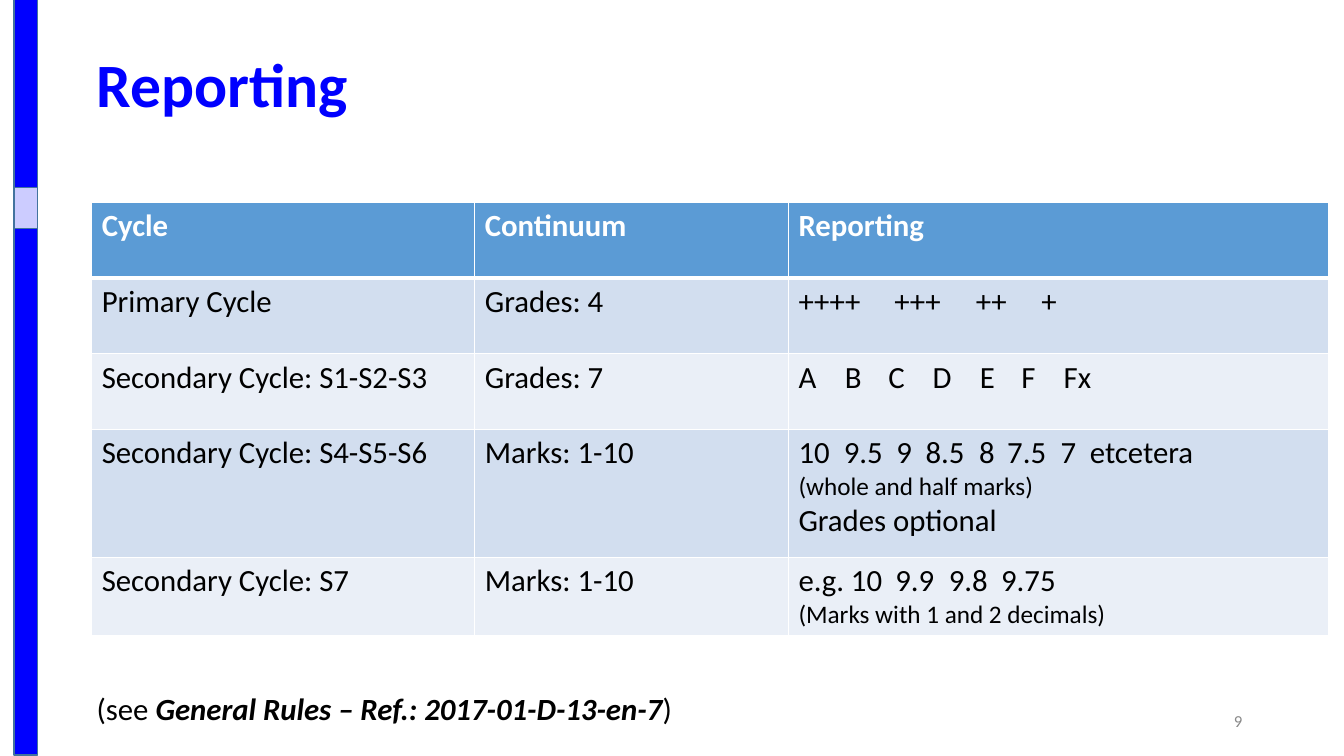
"""Build the Reporting slide with its table of cycles, continuums and report formats."""
from lxml.etree import SubElement
from pptx import Presentation
from pptx.dml.color import RGBColor
from pptx.enum.shapes import MSO_SHAPE
from pptx.enum.text import MSO_ANCHOR, PP_ALIGN
from pptx.oxml.ns import qn
from pptx.util import Inches, Pt

COLORS = {"blue": "0000FF", "lilac": "CCCCFF", "edge": "43739E", "header": "5B9BD5",
          "band": "D2DEEF", "light": "EAEFF7", "white": "FFFFFF", "black": "000000",
          "grey": "898989"}

BARS = [((0.14, -0.01, 0.23, 7.5), "blue"), ((0.14, 1.86, 0.23, 0.41), "lilac")]

BODY = {"size": 22, "color": "black"}
SMALL = {"size": 18, "color": "black"}
HEAD = {"size": 22, "color": "white", "bold": True}

TEXTS = [
    {"box": (0.77, 0.27, 12.57, 1.2), "anchor": MSO_ANCHOR.MIDDLE, "indent": 0.09,
     "para": {"line_spacing": 0.9},
     "runs": [("Reporting", {"size": 44, "color": "blue", "bold": True})]},
    {"box": (0.77, 6.79, 6.06, 0.47), "anchor": MSO_ANCHOR.TOP, "indent": 0.09,
     "para": {"space_before": Pt(6)},
     "runs": [("(see ", BODY),
              ("General Rules – Ref.: 2017-01-D-13-en-7", {**BODY, "bold": True, "italic": True}),
              (")", BODY)]},
    {"box": (9.42, 6.95, 3, 0.4), "anchor": MSO_ANCHOR.MIDDLE, "indent": 0,
     "para": {"alignment": PP_ALIGN.RIGHT},
     "runs": [("9", {"size": 12, "color": "grey"})]},
]

TABLE_BOX = (0.91, 2.01, 12.27, 4.28)
COLS = [3.8, 3.11, 5.36]
ROWS = [0.75, 0.75, 0.75, 1.27, 0.77]
CELLS = [
    ["Cycle", "Continuum", "Reporting"],
    ["Primary Cycle", "Grades: 4", "++++\t+++\t++\t+"],
    ["Secondary Cycle: S1-S2-S3", "Grades: 7", "A\tB\tC\tD\tE\tF\tFx"],
    ["Secondary Cycle: S4-S5-S6", "Marks: 1-10",
     "10\t9.5\t9\t8.5\t8\t7.5\t7\tetcetera\n(whole and half marks)\nGrades optional"],
    ["Secondary Cycle: S7", "Marks: 1-10",
     "e.g. 10\t9.9\t9.8\t9.75\n(Marks with 1 and 2 decimals)"],
]
TABS = {
    1: [0.95, 1.76, 2.41],
    2: [0.46, 0.89, 1.33, 1.8, 2.21, 2.63],
    3: [0.45, 0.97, 1.26, 1.79, 2.07, 2.6, 2.89],
    4: [0.96, 1.49, 2.01],
}


def rgb(name):
    return RGBColor.from_string(COLORS[name])


def inches(box):
    return [Inches(v) for v in box]


def add_run(p, text, fmt):
    r = p.add_run()
    r.text = text
    font = {"name": "Calibri", "bold": False, "italic": False, **fmt}
    font["size"] = Pt(font["size"])
    r.font.color.rgb = rgb(font.pop("color"))
    for key, value in font.items():
        setattr(r.font, key, value)


def add_text(s, item):
    tf = s.shapes.add_textbox(*inches(item["box"])).text_frame
    tf.word_wrap = True
    tf.vertical_anchor = item["anchor"]
    p = tf.paragraphs[0]
    p._p.get_or_add_pPr().set("marL", str(Inches(item["indent"])))
    for key, value in item["para"].items():
        setattr(p, key, value)
    for text, fmt in item["runs"]:
        add_run(p, text, fmt)


def add_bar(s, box, fill):
    sp = s.shapes.add_shape(MSO_SHAPE.RECTANGLE, *inches(box))
    sp.shadow.inherit = False
    sp.fill.solid()
    sp.fill.fore_color.rgb = rgb(fill)
    sp.line.color.rgb = rgb("edge")
    sp.line.width = Pt(1)


def set_borders(cell, row):
    tcPr = cell._tc.get_or_add_tcPr()
    thick = {(0, "lnB"), (1, "lnT")}
    for side in ("lnL", "lnR", "lnT", "lnB"):
        width = Pt(3 if (row, side) in thick else 1)
        ln = SubElement(tcPr, qn(f"a:{side}"), w=str(width))
        fill = SubElement(ln, qn("a:solidFill"))
        SubElement(fill, qn("a:srgbClr"), val=COLORS["white"])


def set_tabs(p, stops):
    tabs = SubElement(p._p.get_or_add_pPr(), qn("a:tabLst"))
    for stop in stops:
        SubElement(tabs, qn("a:tab"), pos=str(Inches(stop)), algn="l")


def fill_cell(cell, row, text):
    set_borders(cell, row)
    cell.fill.solid()
    cell.fill.fore_color.rgb = rgb("header" if row == 0 else "band" if row % 2 else "light")
    tf = cell.text_frame
    for i, line in enumerate(text.split("\n")):
        p = tf.add_paragraph() if i else tf.paragraphs[0]
        if "\t" in line:
            set_tabs(p, TABS[row])
        add_run(p, line, HEAD if row == 0 else SMALL if line.startswith("(") else BODY)


def add_report_table(s):
    table = s.shapes.add_table(len(ROWS), len(COLS), *inches(TABLE_BOX)).table
    table.first_row = table.horz_banding = False
    for col, width in zip(table.columns, COLS):
        col.width = Inches(width)
    for row, height in zip(table.rows, ROWS):
        row.height = Inches(height)
    for i, texts in enumerate(CELLS):
        for j, text in enumerate(texts):
            fill_cell(table.cell(i, j), i, text)


def main():
    prs = Presentation()
    prs.slide_width, prs.slide_height = Inches(13.33), Inches(7.5)
    s = prs.slides.add_slide(prs.slide_layouts[6])
    for box, fill in BARS:
        add_bar(s, box, fill)
    add_report_table(s)
    for item in TEXTS:
        add_text(s, item)
    prs.save("out.pptx")


if __name__ == "__main__":
    main()
